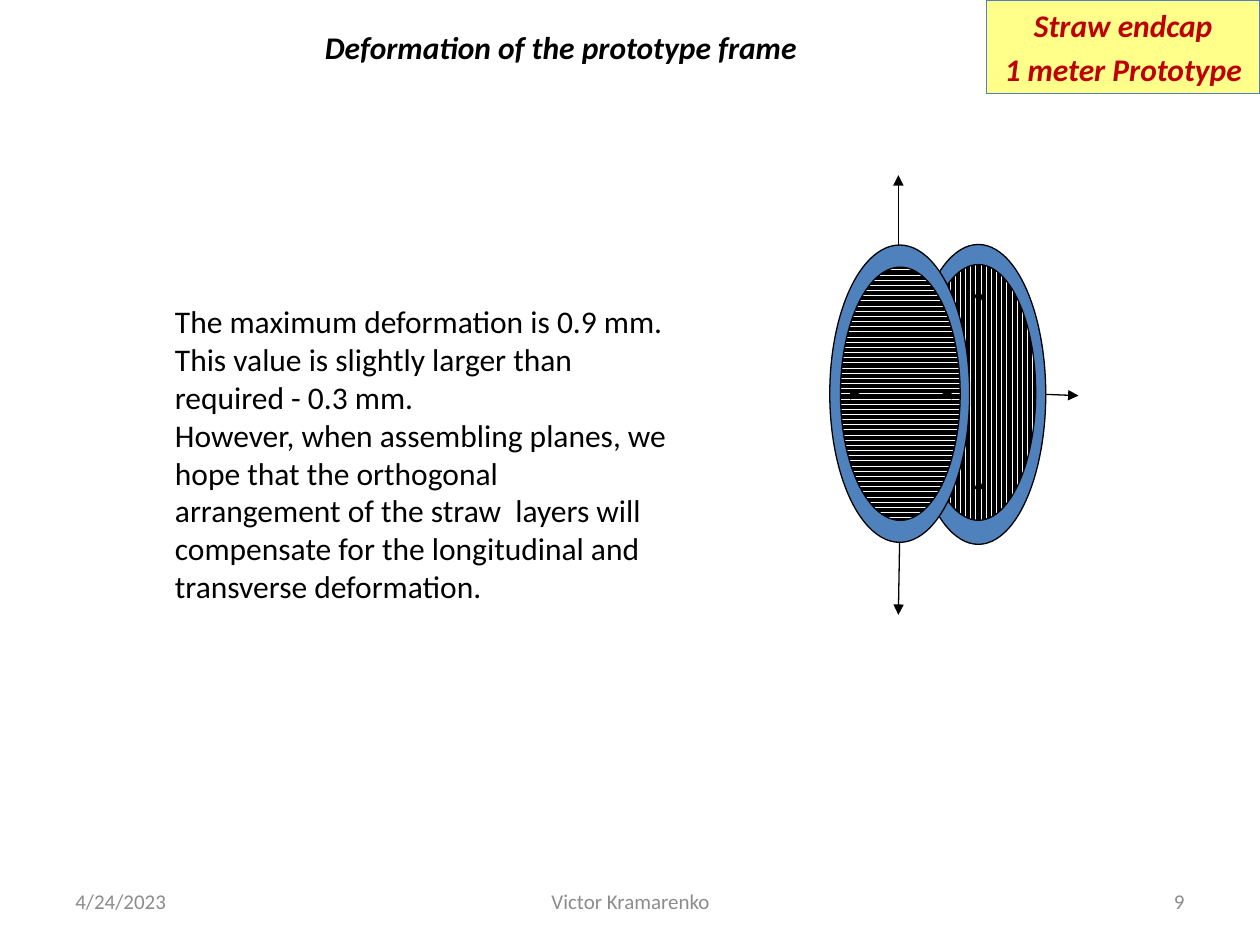
"""Builds the slide on the deformation of the straw prototype frame."""
from lxml import etree
from pptx import Presentation
from pptx.dml.color import RGBColor
from pptx.enum.dml import MSO_PATTERN
from pptx.enum.shapes import MSO_CONNECTOR, MSO_SHAPE
from pptx.enum.text import MSO_ANCHOR, MSO_AUTO_SIZE, PP_ALIGN
from pptx.oxml.ns import qn
from pptx.util import Inches, Pt


def color(value):
    return RGBColor.from_string(value)


class SlideBuilder:
    font = "Calibri"
    black, white, blue = "000000", "FFFFFF", "4F81BD"
    gray, red, yellow = "8C8C8C", "C00000", "FFFF89"
    line_width = 0.75

    def __init__(self, page):
        self.page = page

    def outline(self, item, value):
        item.line.color.rgb = color(value)
        item.line.width = Pt(self.line_width)

    def set_words(self, box, lines, size=18, ink=black, align=PP_ALIGN.LEFT, strong=False, gap=0):
        frame = box.text_frame
        frame.text = "\n".join(lines)
        for para in frame.paragraphs:
            para.alignment = align
            para.space_before = Pt(gap)
            for span in para.runs:
                span.font.name = self.font
                span.font.size = Pt(size)
                span.font.bold = span.font.italic = strong
                span.font.color.rgb = color(ink)

    def text(self, bounds, lines, wrap=True, grow=False, anchor=MSO_ANCHOR.TOP, **style):
        box = self.page.shapes.add_textbox(*map(Inches, bounds))
        self.set_words(box, lines, **style)
        frame = box.text_frame
        frame.word_wrap = wrap
        frame.vertical_anchor = anchor
        frame.auto_size = MSO_AUTO_SIZE.SHAPE_TO_FIT_TEXT if grow else MSO_AUTO_SIZE.NONE

    def shape(self, shapes, kind, bounds, fill=None, line=black, pattern=None, rotation=0):
        item = shapes.add_shape(kind, *map(Inches, bounds))
        item.shadow.inherit = False
        item.rotation = rotation
        if pattern is None:
            item.fill.solid()
            item.fill.fore_color.rgb = color(fill)
        else:
            item.fill.patterned()
            item.fill.pattern = pattern
            item.fill.fore_color.rgb = color(self.black)
            item.fill.back_color.rgb = color(self.white)
        self.outline(item, line)
        return item

    def label(self, bounds, lines):
        box = self.shape(self.page.shapes, MSO_SHAPE.RECTANGLE, bounds, self.yellow, self.blue)
        self.set_words(box, lines, ink=self.red, align=PP_ALIGN.CENTER, strong=True, gap=3.6)
        box.text_frame.vertical_anchor = MSO_ANCHOR.TOP

    def arrow(self, shapes, points):
        item = shapes.add_connector(MSO_CONNECTOR.STRAIGHT, *map(Inches, points))
        self.outline(item, self.black)
        properties = item.element.spPr
        etree.SubElement(properties.find(qn("a:ln")), qn("a:tailEnd"), type="triangle")
        etree.SubElement(properties, qn("a:effectLst"))

    def plane(self, frame, straws, pattern, arrows, rotation=0):
        shapes = self.page.shapes.add_group_shape().shapes
        self.shape(shapes, MSO_SHAPE.OVAL, frame, fill=self.blue, rotation=rotation)
        self.shape(shapes, MSO_SHAPE.OVAL, straws, pattern=pattern, rotation=rotation)
        for points in arrows:
            self.arrow(shapes, points)


def main():
    deck = Presentation()
    deck.slide_width, deck.slide_height = Inches(10), Inches(7.5)
    builder = SlideBuilder(deck.slides.add_slide(deck.slide_layouts[6]))

    footers = [
        (0.5, 2.33, "4/24/2023", PP_ALIGN.LEFT),
        (3.42, 3.17, "Victor Kramarenko", PP_ALIGN.CENTER),
        (7.17, 2.33, "9", PP_ALIGN.RIGHT),
    ]
    for left, width, words, align in footers:
        builder.text((left, 6.95, width, 0.4), [words], anchor=MSO_ANCHOR.MIDDLE,
                     size=12, ink=builder.gray, align=align)

    builder.plane(
        (7.23, 1.94, 1.07, 2.38), (7.31, 2.1, 0.91, 2.03), MSO_PATTERN.DARK_VERTICAL,
        [(7.77, 2.1, 7.77, 2.42), (7.77, 4.13, 7.77, 3.8),
         (7.23, 3.14, 6.98, 3.14), (8.3, 3.13, 8.56, 3.14)])
    builder.plane(
        (5.96, 2.57, 2.36, 1.11), (6.14, 2.65, 2.01, 0.95), MSO_PATTERN.DARK_HORIZONTAL,
        [(7.62, 3.13, 7.47, 3.13), (6.67, 3.13, 6.83, 3.13),
         (7.13, 1.95, 7.13, 1.39), (7.14, 4.3, 7.13, 4.88)], rotation=90)

    builder.text((1.29, 2.35, 4.1, 2.52), [
        "The maximum deformation is 0.9 mm. This value is slightly larger than "
        "required - 0.3 mm.",
        "However, when assembling planes, we hope that the orthogonal arrangement of "
        "the straw  layers will compensate for the longitudinal and transverse deformation.",
    ], grow=True)
    builder.label((7.83, 0, 2.17, 0.74), ["Straw endcap", "1 meter Prototype"])
    builder.text((2.48, 0.17, 4.03, 0.4), ["Deformation of the prototype frame"],
                 wrap=False, grow=True, strong=True)
    deck.save("out.pptx")


if __name__ == "__main__":
    main()
